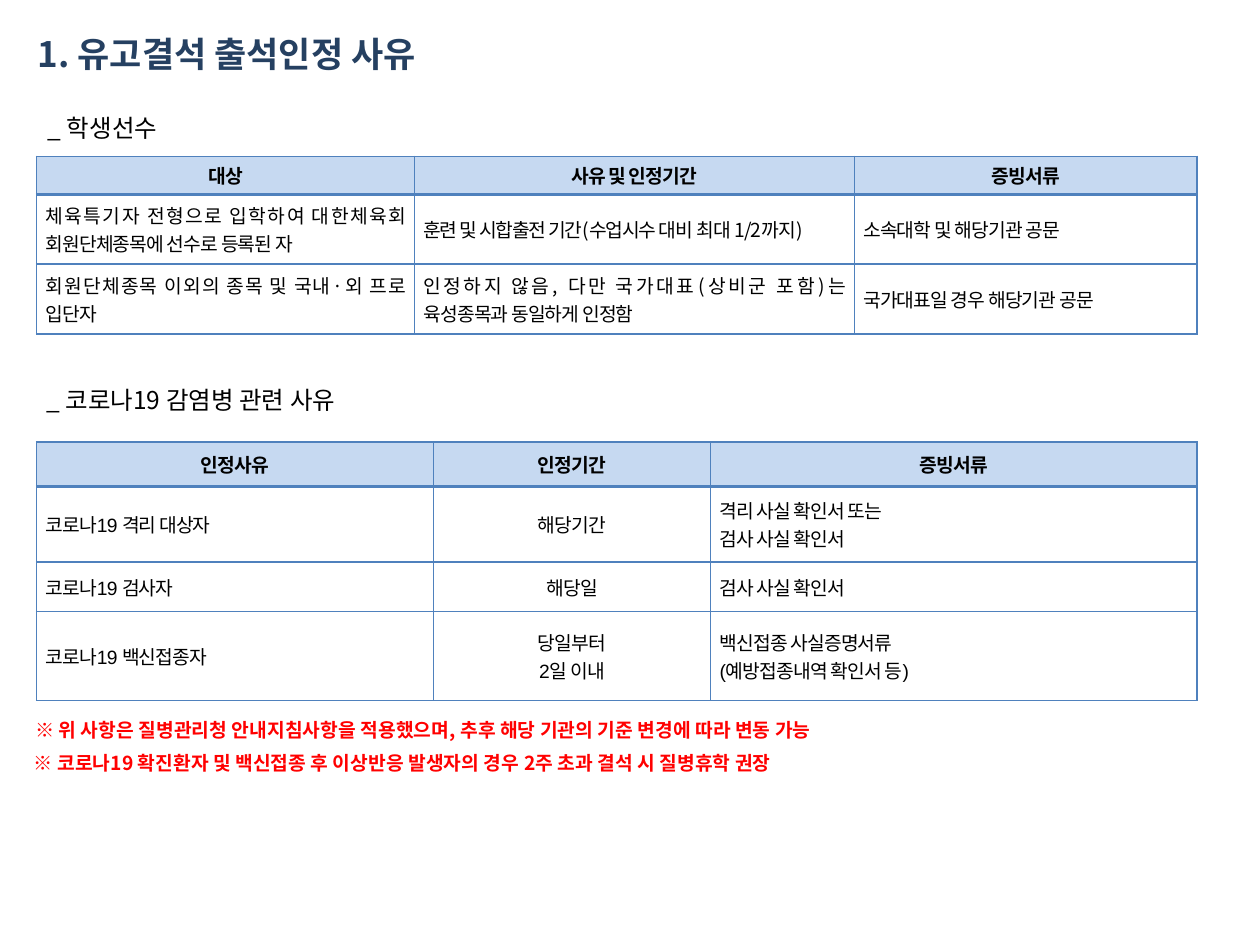
from dataclasses import dataclass
from typing import NamedTuple

from lxml.etree import SubElement
from pptx import Presentation
from pptx.dml.color import RGBColor
from pptx.enum.text import MSO_ANCHOR, MSO_AUTO_SIZE, PP_ALIGN as Al
from pptx.oxml import parse_xml
from pptx.oxml.ns import nsdecls, qn
from pptx.util import Pt

NAVY = RGBColor(0x25, 0x40, 0x61)
BLACK = RGBColor(0, 0, 0)
RED = RGBColor(0xFF, 0, 0)
BLUE = RGBColor(0x4F, 0x81, 0xBD)
PALE = RGBColor(0xC6, 0xD9, 0xF1)
NOTO, ARIAL = "Noto Sans CJK KR", "Arial"


class Label(NamedTuple):
    text: str
    left: float
    top: float
    width: float
    height: float
    size: float
    color: RGBColor
    bold: bool = False
    wrap: bool = False


class Tight(NamedTuple):
    """Cell text whose first part has tighter letter spacing."""
    start: str
    spacing: float
    rest: str


@dataclass
class Grid:
    left: float
    top: float
    widths: list[float]
    heights: list[float]
    body_align: list[Al]
    body_font: str
    rows: list[list[str | Tight]]


LABELS = [
    Label("1. 유고결석 출석인정 사유", 14.4, 15.1, 254.9, 31.7, 20, NAVY, True),
    Label("_ 코로나19 감염병 관련 사유", 19.4, 216.7, 197.3, 24.5, 14, BLACK),
    Label("_ 학생선수", 20.2, 61.2, 82.1, 24.5, 14, BLACK),
    Label("※ 코로나19 확진환자 및 백신접종 후 이상반응 발생자의 경우 2주 초과 결석 시 질병휴학 권장",
          12.2, 425.5, 486, 20.9, 11, RED, True),
    Label("※ 위 사항은 질병관리청 안내지침사항을 적용했으며, 추후 해당 기관의 기준 변경에 따라 변동 가능",
          13, 406.8, 531.4, 35.3, 11, RED, True, True),
]

GRIDS = [
    Grid(20.9, 89.3, [216, 251.3, 195.8], [21.6, 40, 40], [Al.JUSTIFY] * 3, NOTO, [
        ["대상", "사유 및 인정기간", "증빙서류"],
        ["체육특기자 전형으로 입학하여 대한체육회 회원단체종목에 선수로 등록된 자",
         Tight("훈련 및 시합출전 기간(수업시수 대비", -0.7, " 최대 1/2까지)"),
         "소속대학 및 해당기관 공문"],
        ["회원단체종목 이외의 종목 및 국내·외 프로 입단자",
         Tight("인정하지 않음, 다만 국가대표(상비군", -0.6, " 포함)는 육성종목과 동일하게 인정함"),
         "국가대표일 경우 해당기관 공문"],
    ]),
    Grid(20.9, 252.7, [226.8, 158.4, 277.9], [25.4, 43, 28.3, 51],
         [Al.JUSTIFY, Al.CENTER, Al.JUSTIFY], ARIAL, [
        ["인정사유", "인정기간", "증빙서류"],
        ["코로나19 격리 대상자", "해당기간", "격리 사실 확인서 또는\n검사 사실 확인서"],
        ["코로나19 검사자", "해당일", "검사 사실 확인서"],
        ["코로나19 백신접종자", "당일부터\n2일 이내", "백신접종 사실증명서류\n(예방접종내역 확인서 등)"],
    ]),
]


def style_run(r, size: float, color: RGBColor, bold: bool,
              font: str = NOTO, spacing: float = 0) -> None:
    r.font.size, r.font.bold, r.font.name = Pt(size), bold, font
    r.font.color.rgb = color
    rPr = r._r.get_or_add_rPr()
    SubElement(rPr, qn("a:ea")).set("typeface", NOTO)
    if spacing:
        rPr.set("spc", str(round(spacing * 100)))


def add_label(s, label: Label) -> None:
    box = s.shapes.add_textbox(*map(Pt, label[1:5]))
    tf = box.text_frame
    tf.word_wrap, tf.auto_size = label.wrap, MSO_AUTO_SIZE.SHAPE_TO_FIT_TEXT
    tf.text = label.text
    style_run(tf.paragraphs[0].runs[0], label.size, label.color, label.bold)


def set_borders(cell, top: float, bottom: float) -> None:
    tcPr = cell._tc.get_or_add_tcPr()
    for i, (side, width) in enumerate(zip("LRTB", (1, 1, top, bottom))):
        tcPr.insert(i, parse_xml(
            f'<a:ln{side} {nsdecls("a")} w="{Pt(width)}"><a:solidFill>'
            f'<a:srgbClr val="{BLUE}"/></a:solidFill></a:ln{side}>'))


def fill_cell(cell, text: str | Tight, header: bool, align: Al, font: str) -> None:
    cell.vertical_anchor = MSO_ANCHOR.MIDDLE
    cell.margin_left = cell.margin_right = Pt(5.1)
    cell.margin_top = cell.margin_bottom = Pt(1.4)
    tf = cell.text_frame
    tight = isinstance(text, Tight)
    tf.text = text.start if tight else text
    if tight:
        tf.paragraphs[0].add_run().text = text.rest
    for p in tf.paragraphs:
        p.alignment = align
        for i, r in enumerate(p.runs):
            spacing = text.spacing if tight and i == 0 else -0.5
            style_run(r, 11, BLACK, header, font, spacing)
    if header:
        cell.fill.solid()
        cell.fill.fore_color.rgb = PALE
    else:
        cell.fill.background()


def add_grid(s, grid: Grid) -> None:
    table = s.shapes.add_table(
        len(grid.heights), len(grid.widths), Pt(grid.left), Pt(grid.top),
        Pt(sum(grid.widths)), Pt(sum(grid.heights))).table
    table.first_row = table.horz_banding = False
    for column, width in zip(table.columns, grid.widths):
        column.width = Pt(width)
    for i, (row, height) in enumerate(zip(table.rows, grid.heights)):
        row.height = Pt(height)
        header = i == 0
        for j, text in enumerate(grid.rows[i]):
            cell = table.cell(i, j)
            fill_cell(cell, text, header, Al.CENTER if header else grid.body_align[j],
                      NOTO if header else grid.body_font)
            # The rule under the header row is thicker
            set_borders(cell, 2 if i == 1 else 1, 2 if header else 1)


def main() -> None:
    prs = Presentation()
    prs.slide_width, prs.slide_height = Pt(720), Pt(540)
    s = prs.slides.add_slide(prs.slide_layouts[6])

    # Title, section headings and notes
    for label in LABELS:
        add_label(s, label)

    # Athletes table and infection table
    for grid in GRIDS:
        add_grid(s, grid)

    prs.save("out.pptx")


if __name__ == "__main__":
    main()
